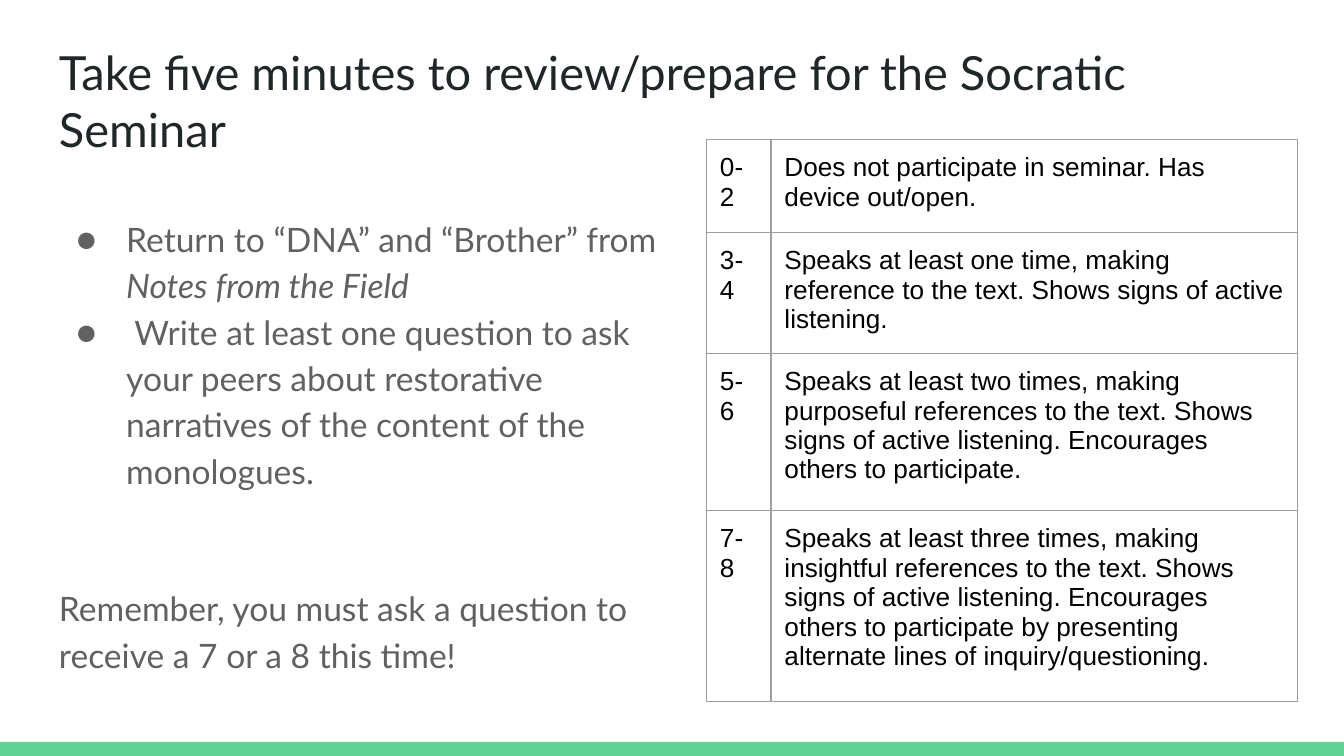
"""Build the Socratic Seminar preparation slide with its scoring rubric."""
import dataclasses

import pptx
import pptx.dml.color
import pptx.enum.shapes
import pptx.enum.text
import pptx.oxml
import pptx.oxml.ns
import pptx.util

HEADING = "Take five minutes to review/prepare for the Socratic Seminar"
TASKS = [
    [("Return to “DNA” and “Brother” from ", False), ("Notes from the Field", True)],
    [(" Write at least one question to ask your peers about restorative "
      "narratives of the content of the monologues.", False)],
]
REMINDER = "Remember, you must ask a question to receive a 7 or a 8 this time!"
RUBRIC = [
    ("0-2", "Does not participate in seminar. Has device out/open."),
    ("3-4", "Speaks at least one time, making reference to the text. "
            "Shows signs of active listening."),
    ("5-6", "Speaks at least two times, making purposeful references to the text. "
            "Shows signs of active listening. Encourages others to participate."),
    ("7-8", "Speaks at least three times, making insightful references to the text. "
            "Shows signs of active listening. Encourages others to participate by "
            "presenting alternate lines of inquiry/questioning."),
]

WIDTH = 10
HEIGHT = WIDTH * 9 / 16
GRID_COLUMNS = 100
UNIT = WIDTH / GRID_COLUMNS
GRID_ROWS = HEIGHT / UNIT
MARGIN = 3.41
BAR_ROWS = 1.05
RUBRIC_COLUMNS = (4.8, 39.2)
RUBRIC_ROWS = (6.9, 6.9, 11.7, 14.2)


@dataclasses.dataclass(frozen=True)
class Theme:
    paper: str = "FFFFFF"
    accent: str = "63D297"
    heading: str = "202729"
    body: str = "616161"
    rubric: str = "000000"
    border: str = "9E9E9E"
    text_font: str = "Lato"
    rubric_font: str = "Arial"
    heading_size: float = 25.2
    body_size: int = 18
    rubric_size: int = 14
    border_width: float = 0.75


THEME = Theme()


def grid(*units):
    return [pptx.util.Inches(unit * UNIT) for unit in units]


def color(value):
    return pptx.dml.color.RGBColor.from_string(value)


def add_run(paragraph, text, font, size, ink, italic=False):
    run = paragraph.add_run()
    run.text = text
    run.font.name, run.font.size, run.font.italic = font, pptx.util.Pt(size), italic
    run.font.color.rgb = color(ink)


def pad(box):
    box.margin_left, box.margin_top, box.margin_right, box.margin_bottom = grid(1, 1, 1, 1)


def add_text_frame(slide, *place):
    frame = slide.shapes.add_textbox(*grid(*place)).text_frame
    frame.word_wrap = True
    frame.vertical_anchor = pptx.enum.text.MSO_ANCHOR.TOP
    pad(frame)
    return frame


def add_bullet(paragraph):
    properties = paragraph._p.get_or_add_pPr()
    properties.set("marL", str(pptx.util.Inches(0.5)))
    properties.set("indent", str(pptx.util.Inches(-0.37)))
    ns = pptx.oxml.ns.nsdecls("a")
    for element in (
        f'<a:buClr {ns}><a:srgbClr val="{THEME.body}"/></a:buClr>',
        f'<a:buSzPts {ns} val="{THEME.body_size * 100}"/>',
        f'<a:buFont {ns} typeface="{THEME.text_font}"/>',
        f'<a:buChar {ns} char="●"/>',
    ):
        properties.append(pptx.oxml.parse_xml(element))


def add_instructions(slide):
    frame = add_text_frame(slide, MARGIN, 14.83, 46.6, 37.4)
    for index, runs in enumerate([*TASKS, [(REMINDER, False)]]):
        paragraph = frame.add_paragraph() if index else frame.paragraphs[0]
        if index < len(TASKS):
            add_bullet(paragraph)
        else:
            paragraph.space_before = pptx.util.Pt(49)
        paragraph.line_spacing = 1.15
        for text, italic in runs:
            add_run(paragraph, text, THEME.text_font, THEME.body_size, THEME.body, italic)


def style_cell(cell):
    pad(cell)
    properties = cell._tc.get_or_add_tcPr()
    for side in ("lnL", "lnR", "lnT", "lnB"):
        properties.append(pptx.oxml.parse_xml(
            f'<a:{side} {pptx.oxml.ns.nsdecls("a")} w="{pptx.util.Pt(THEME.border_width)}">'
            f'<a:solidFill><a:srgbClr val="{THEME.border}"/></a:solidFill></a:{side}>'))
    cell.fill.background()


def add_rubric(slide):
    place = grid(52.57, 10.4, sum(RUBRIC_COLUMNS), sum(RUBRIC_ROWS))
    rubric = slide.shapes.add_table(len(RUBRIC), len(RUBRIC_COLUMNS), *place).table
    rubric.first_row = rubric.horz_banding = False
    for column, width in zip(rubric.columns, grid(*RUBRIC_COLUMNS)):
        column.width = width
    for row, height, entries in zip(rubric.rows, grid(*RUBRIC_ROWS), RUBRIC):
        row.height = height
        for cell, entry in zip(row.cells, entries):
            style_cell(cell)
            add_run(cell.text_frame.paragraphs[0], entry,
                    THEME.rubric_font, THEME.rubric_size, THEME.rubric)


def main():
    deck = pptx.Presentation()
    deck.slide_width, deck.slide_height = pptx.util.Inches(WIDTH), pptx.util.Inches(HEIGHT)
    slide = deck.slides.add_slide(deck.slide_layouts[6])
    slide.background.fill.solid()
    slide.background.fill.fore_color.rgb = color(THEME.paper)

    bar = slide.shapes.add_shape(
        pptx.enum.shapes.MSO_SHAPE.RECTANGLE,
        *grid(0, GRID_ROWS - BAR_ROWS, GRID_COLUMNS, BAR_ROWS))
    bar.shadow.inherit = False
    bar.fill.solid()
    bar.fill.fore_color.rgb = color(THEME.accent)
    bar.line.fill.background()

    heading = add_text_frame(slide, MARGIN, 2.27, GRID_COLUMNS - 2 * MARGIN, 6.3)
    add_run(heading.paragraphs[0], HEADING, THEME.text_font, THEME.heading_size, THEME.heading)
    add_instructions(slide)
    add_rubric(slide)
    deck.save("out.pptx")


if __name__ == "__main__":
    main()
